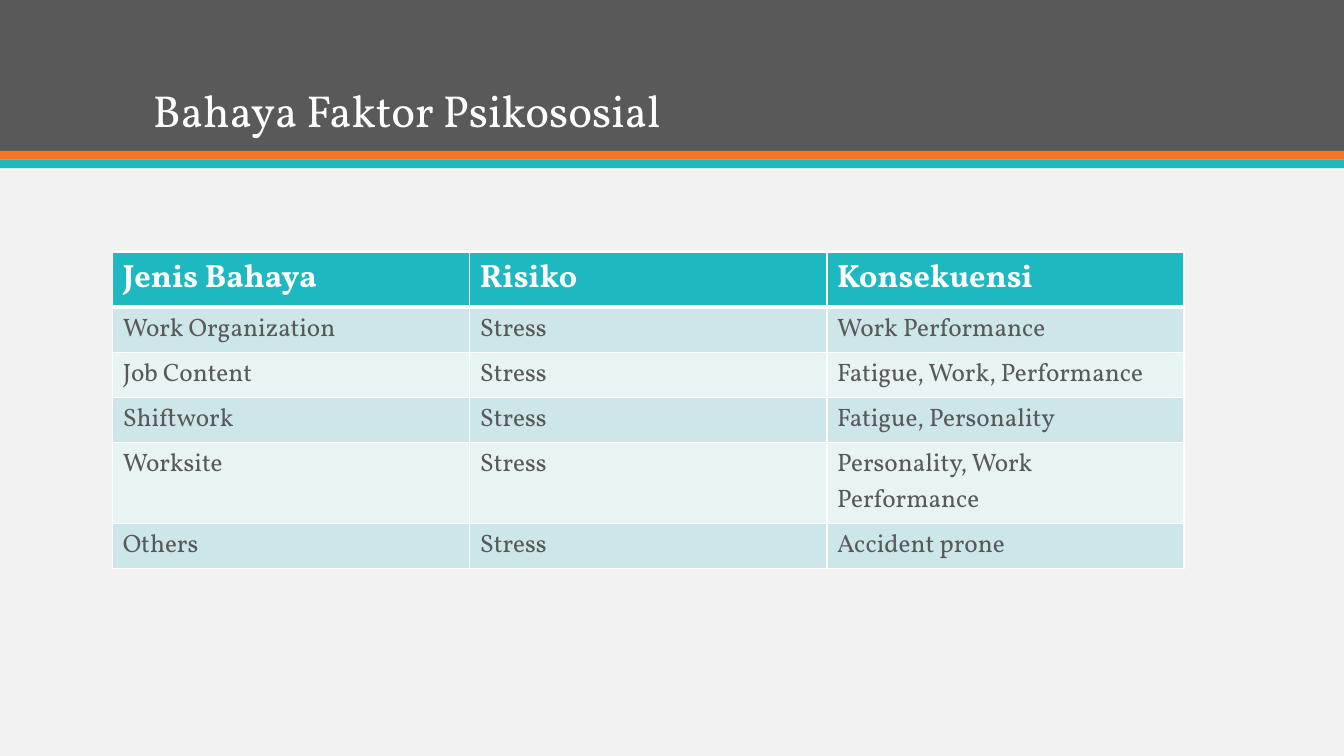
import pptx
import pptx.dml.color
import pptx.enum.shapes
import pptx.enum.text
import pptx.oxml
import pptx.oxml.ns
import pptx.util

Cm = pptx.util.Cm
RGBColor = pptx.dml.color.RGBColor

WHITE = RGBColor(0xFF, 0xFF, 0xFF)
PALE_GREY = RGBColor(0xF2, 0xF2, 0xF2)
DARK_GREY = RGBColor(0x59, 0x59, 0x59)
ORANGE = RGBColor(0xEF, 0x79, 0x20)
TEAL = RGBColor(0x1E, 0xB8, 0xC1)
BAND_DARK = RGBColor(0xCD, 0xE6, 0xE9)
BAND_LIGHT = RGBColor(0xE8, 0xF3, 0xF4)

FONT = "Vollkorn"
SLIDE_WIDTH = Cm(33.87)


def write_text(frame, text, size, color, bold=False, line_spacing=1.0):
    para = frame.paragraphs[0]
    para.alignment = pptx.enum.text.PP_ALIGN.LEFT
    para.line_spacing = line_spacing
    span = para.add_run()
    span.text = text
    span.font.name = FONT
    span.font.size = pptx.util.Pt(size)
    span.font.bold = bold
    span.font.color.rgb = color


def add_cell_border(cell, side, points):
    """Draw one white edge; side is L, R, T or B. Call before filling the cell."""
    width = pptx.util.Pt(points)
    line = pptx.oxml.parse_xml(
        f'<a:ln{side} {pptx.oxml.ns.nsdecls("a")} w="{width}">'
        f'<a:solidFill><a:srgbClr val="{WHITE}"/></a:solidFill></a:ln{side}>'
    )
    cell._tc.get_or_add_tcPr().append(line)


deck = pptx.Presentation()
deck.slide_width = SLIDE_WIDTH
deck.slide_height = Cm(19.05)
page = deck.slides.add_slide(deck.slide_layouts[5])
page.background.fill.solid()
page.background.fill.fore_color.rgb = PALE_GREY

# Header band with two stripes
for top, height, color in [
    (0, 3.81, DARK_GREY),
    (3.8, 0.22, ORANGE),
    (4.02, 0.22, TEAL),
]:
    band = page.shapes.add_shape(
        pptx.enum.shapes.MSO_SHAPE.RECTANGLE, 0, Cm(top), SLIDE_WIDTH, Cm(height)
    )
    band.shadow.inherit = False
    band.fill.solid()
    band.fill.fore_color.rgb = color
    band.line.fill.background()

# Title, brought in front of the band
title = page.shapes.title
title.element.getparent().append(title.element)
title.left, title.top = Cm(3.6), Cm(0.71)
title.width, title.height = Cm(26.67), Cm(2.87)
title.text_frame.auto_size = pptx.enum.text.MSO_AUTO_SIZE.NONE
title.text_frame.vertical_anchor = pptx.enum.text.MSO_ANCHOR.BOTTOM
write_text(title.text_frame, "Bahaya Faktor Psikososial", size=32, color=WHITE,
           line_spacing=0.9)

# Hazard table
hazards = [
    ("Jenis Bahaya", "Risiko", "Konsekuensi"),
    ("Work Organization", "Stress", "Work Performance"),
    ("Job Content", "Stress", "Fatigue, Work, Performance"),
    ("Shiftwork", "Stress", "Fatigue, Personality"),
    ("Worksite", "Stress", "Personality, Work Performance"),
    ("Others", "Stress", "Accident prone"),
]
row_height = Cm(1.03)
table = page.shapes.add_table(
    len(hazards), 3, Cm(2.84), Cm(6.35), Cm(27), row_height * len(hazards)
).table

for row_index, hazard in enumerate(hazards):
    table.rows[row_index].height = row_height
    is_header = row_index == 0
    if is_header:
        fill_color = TEAL
    else:
        fill_color = BAND_DARK if row_index % 2 else BAND_LIGHT
    border_widths = {
        "L": 1,
        "R": 1,
        "T": 3 if row_index == 1 else 1,
        "B": 3 if is_header else 1,
    }
    for column_index, text in enumerate(hazard):
        cell = table.cell(row_index, column_index)
        for side, points in border_widths.items():
            add_cell_border(cell, side, points)
        cell.fill.solid()
        cell.fill.fore_color.rgb = fill_color
        write_text(cell.text_frame, text, size=23 if is_header else 18,
                   color=WHITE if is_header else DARK_GREY, bold=is_header)

deck.save("out.pptx")
